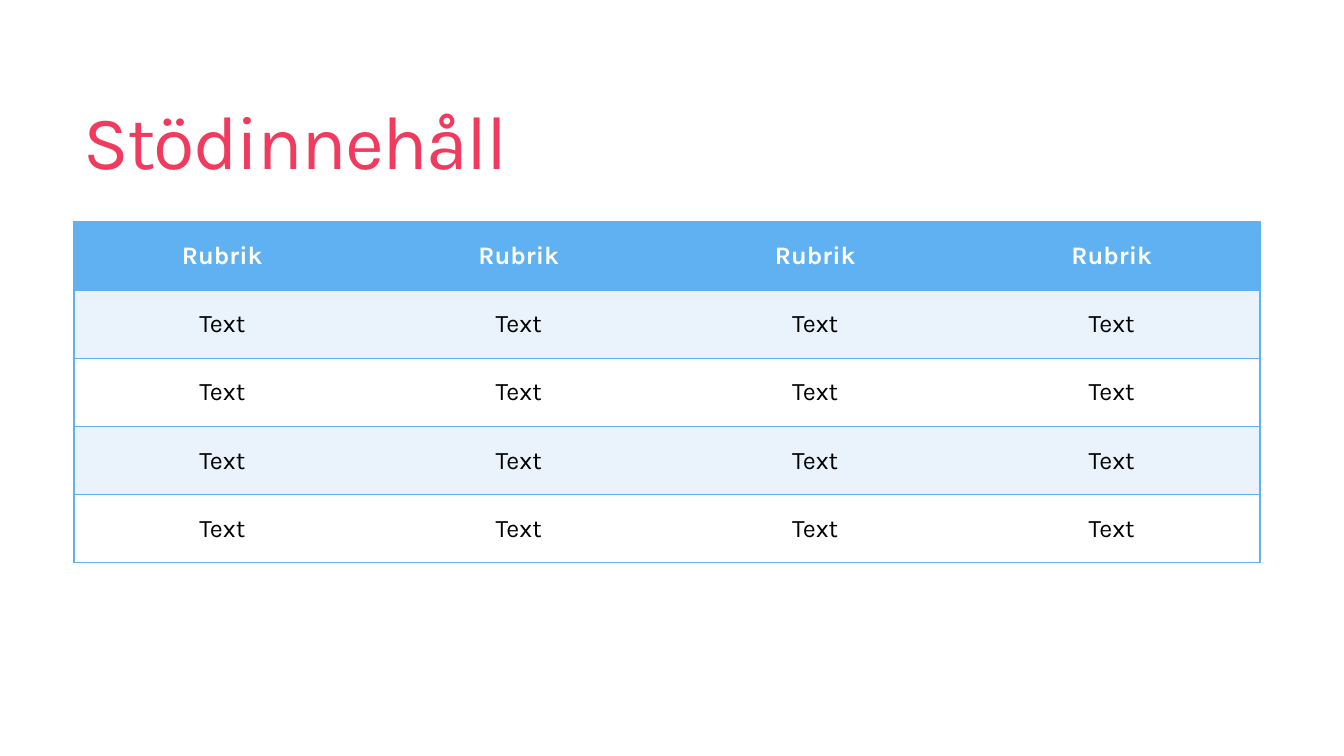
"""Build a slide with a title and a banded table."""
from lxml import etree
from pptx import Presentation
from pptx.dml.color import RGBColor
from pptx.enum import text
from pptx.oxml import ns
from pptx.util import Pt

TITLE = "Stödinnehåll"
ROWS = [["Rubrik"] * 4] + [["Text"] * 4 for _ in range(4)]

SLIDE = (1344, 756)
TITLE_BOX = (73, 55, 1187, 182)
TABLE_BOX = (74, 222, 1186, 341)

FONT = "Karla"
PINK = RGBColor(0xF0, 0x3B, 0x5E)
BLUE = RGBColor(0x60, 0xB1, 0xF2)
PALE = RGBColor(0xEA, 0xF2, 0xFC)
WHITE = RGBColor(0xFF, 0xFF, 0xFF)
BLACK = RGBColor(0, 0, 0)


def px(n):
    return round(n * 914400 / 100.8)


def put_text(tf, words, size, color, bold=False, align=text.PP_ALIGN.LEFT,
             line=None, spacing=None):
    p = tf.paragraphs[0]
    p.alignment = align
    p.line_spacing = line
    r = p.add_run()
    r.text = words
    r.font.name, r.font.size, r.font.bold = FONT, Pt(size), bold
    r.font.color.rgb = color
    if spacing is not None:
        r.font._element.set("spc", str(round(spacing * 100)))


def set_borders(cell, sides):
    tc_pr = cell._tc.get_or_add_tcPr()
    for i, side in enumerate("LRTB"):
        ln = etree.Element(ns.qn(f"a:ln{side}"), w=str(Pt(1)))
        if side in sides:
            fill = etree.SubElement(ln, ns.qn("a:solidFill"))
            etree.SubElement(fill, ns.qn("a:srgbClr"), val=str(BLUE))
        else:
            etree.SubElement(ln, ns.qn("a:noFill"))
        tc_pr.insert(i, ln)


def add_title(s):
    sp = s.shapes.title
    sp.left, sp.top, sp.width, sp.height = map(px, TITLE_BOX)
    tf = sp.text_frame
    tf.word_wrap = True
    tf.auto_size = text.MSO_AUTO_SIZE.NONE
    tf.vertical_anchor = text.MSO_ANCHOR.MIDDLE
    put_text(tf, TITLE, 54, PINK, line=0.85, spacing=-1.2)


def add_grid(s):
    n_rows, n_cols = len(ROWS), len(ROWS[0])
    table = s.shapes.add_table(n_rows, n_cols, *map(px, TABLE_BOX)).table
    for col in table.columns:
        col.width = px(TABLE_BOX[2] / n_cols)
    for i, words in enumerate(ROWS):
        table.rows[i].height = px(TABLE_BOX[3] / n_rows)
        header = i == 0
        fill = BLUE if header else PALE if i % 2 else WHITE
        for j, word in enumerate(words):
            cell = table.cell(i, j)
            cell.vertical_anchor = text.MSO_ANCHOR.MIDDLE
            cell.fill.solid()
            cell.fill.fore_color.rgb = fill
            sides = "TB" + "L" * (j == 0) + "R" * (j == n_cols - 1)
            set_borders(cell, sides)
            put_text(cell.text_frame, word, 18, WHITE if header else BLACK,
                     bold=header, align=text.PP_ALIGN.CENTER)


def main():
    prs = Presentation()
    prs.slide_width, prs.slide_height = map(px, SLIDE)
    s = prs.slides.add_slide(prs.slide_layouts[5])
    s.background.fill.solid()
    s.background.fill.fore_color.rgb = WHITE
    add_title(s)
    add_grid(s)
    prs.save("out.pptx")


if __name__ == "__main__":
    main()
